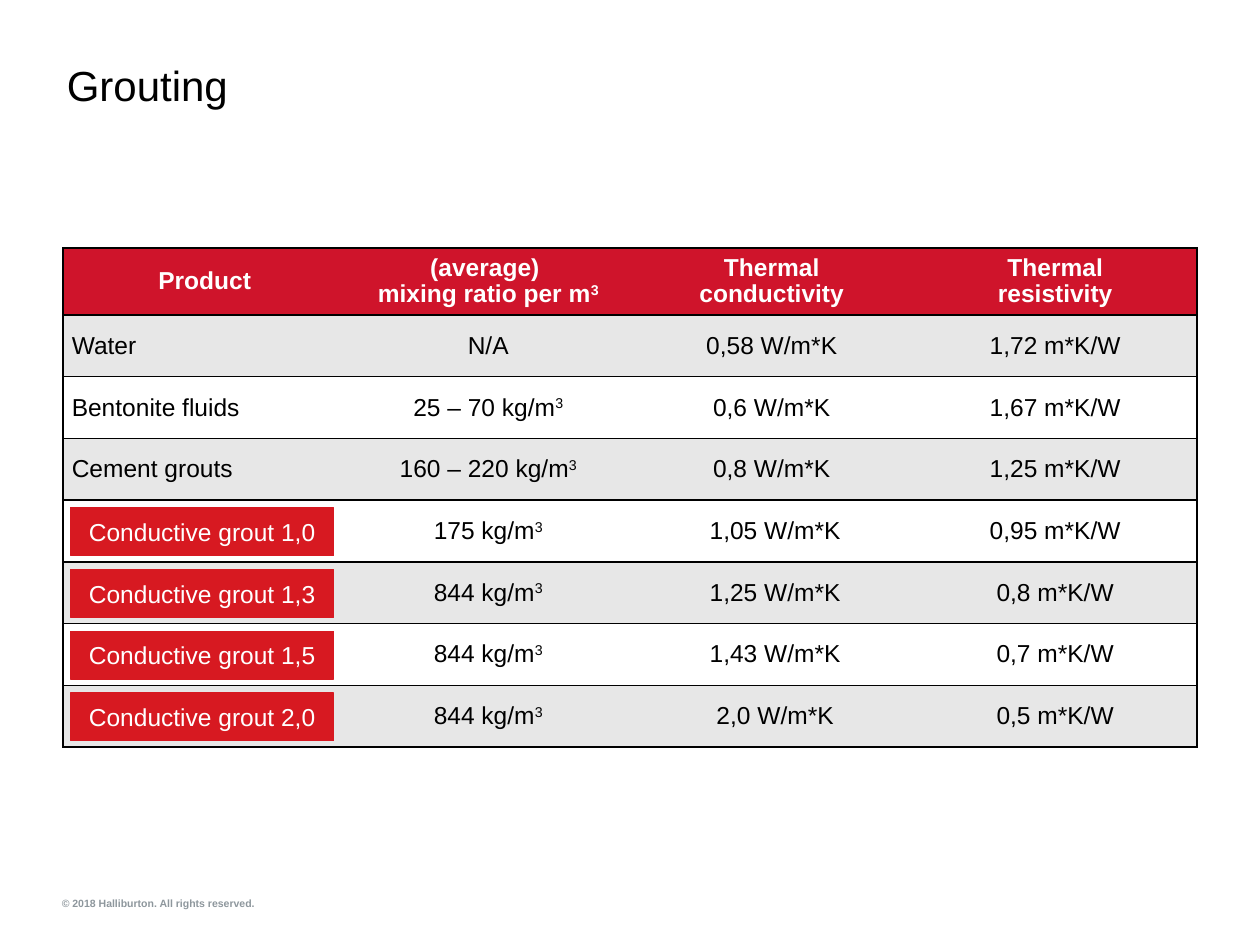
from lxml import etree
from pptx import Presentation
from pptx.dml.color import RGBColor
from pptx.enum.shapes import MSO_SHAPE
from pptx.enum.text import MSO_ANCHOR as ANCHOR, PP_ALIGN as ALIGN
from pptx.oxml.ns import qn
from pptx.util import Inches, Pt


def color(hex_text):
    return RGBColor.from_string(hex_text)


def add_run(p, text, size, hex_text, bold=False):
    r = p.add_run()
    r.text = text
    r.font.name = "Arial"
    r.font.size = Pt(size)
    r.font.bold = bold
    r.font.color.rgb = color(hex_text)
    return r


prs = Presentation()
prs.slide_width, prs.slide_height = Inches(10), Inches(7.5)
s = prs.slides.add_slide(prs.slide_layouts[5])

title = s.shapes.title
title.left, title.top = Inches(0.43), Inches(0.43)
title.width, title.height = Inches(9.15), Inches(0.93)
tf = title.text_frame
tf.margin_left = tf.margin_right = Inches(0.1)
tf.margin_top = tf.margin_bottom = Inches(0.04)
tf.vertical_anchor = ANCHOR.TOP
tf.paragraphs[0].alignment = ALIGN.LEFT
add_run(tf.paragraphs[0], "Grouting", 24, "000000")

footer = s.shapes.add_textbox(Inches(0.49), Inches(7.12), Inches(1.55), Inches(0.1))
tf = footer.text_frame
tf.margin_left = tf.margin_right = tf.margin_top = tf.margin_bottom = 0
tf.word_wrap = False
tf.paragraphs[0].alignment = ALIGN.LEFT
add_run(tf.paragraphs[0], "© 2018 Halliburton. All rights reserved.", 6, "8E979D", True)

rows = [
    ["Product", "(average) \nmixing ratio per m³", "Thermal\nconductivity", "Thermal\nresistivity"],
    ["Water", "N/A", "0,58 W/m*K", "1,72 m*K/W"],
    ["Bentonite fluids", "25 – 70 kg/m³", "0,6 W/m*K", "1,67 m*K/W"],
    ["Cement grouts", "160 – 220 kg/m³", "0,8 W/m*K", "1,25 m*K/W"],
    ["", "175 kg/m³", " 1,05 W/m*K", "0,95 m*K/W"],
    ["", "844 kg/m³", " 1,25 W/m*K", "0,8 m*K/W"],
    ["", "844 kg/m³", " 1,43 W/m*K", "0,7 m*K/W"],
    ["", "844 kg/m³", " 2,0 W/m*K", "0,5 m*K/W"],
]
table = s.shapes.add_table(8, 4, Inches(0.5), Inches(1.97), Inches(9), Inches(3.96)).table
for col in table.columns:
    col.width = Inches(2.25)

for i, row in enumerate(rows):
    header = i == 0
    table.rows[i].height = Inches(0.53 if header else 0.49)
    fill = "CF142B" if header else "E7E7E7" if i % 2 else "FFFFFF"
    for j, text in enumerate(row):
        cell = table.cell(i, j)
        cell.fill.solid()
        cell.fill.fore_color.rgb = color(fill)
        cell.vertical_anchor = ANCHOR.MIDDLE
        cell.margin_left = cell.margin_right = Inches(0.07)
        cell.margin_top = cell.margin_bottom = Inches(0.04)

        tcPr = cell._tc.get_or_add_tcPr()
        sides = [("L", j == 0), ("R", j == 3), ("T", True), ("B", True)]
        for k, (side, visible) in enumerate(sides):
            ln = etree.Element(qn("a:ln" + side), w=str(Pt(1)))
            if visible:
                line_fill = etree.SubElement(ln, qn("a:solidFill"))
                etree.SubElement(line_fill, qn("a:srgbClr"), val="000000")
            else:
                etree.SubElement(ln, qn("a:noFill"))
            tcPr.insert(k, ln)

        if not text:
            continue
        tf = cell.text_frame
        for k, line in enumerate(text.split("\n")):
            p = tf.add_paragraph() if k else tf.paragraphs[0]
            p.alignment = ALIGN.CENTER if header or j else ALIGN.LEFT
            if header:
                p.line_spacing = 0.95
            ink = "FFFFFF" if header else "000000"
            add_run(p, line.removesuffix("³"), 14, ink, header)
            if line.endswith("³"):
                r = add_run(p, "3", 14, ink, header)
                r._r.get_or_add_rPr().set("baseline", "30000")

for i, grade in enumerate(["1,0", "1,3", "1,5", "2,0"]):
    sp = s.shapes.add_shape(MSO_SHAPE.RECTANGLE, Inches(0.56), Inches(4.03 + 0.49 * i),
                            Inches(2.09), Inches(0.38))
    sp.shadow.inherit = False
    sp.fill.solid()
    sp.fill.fore_color.rgb = color("D71921")
    sp.line.color.rgb = color("D71921")
    sp.line.width = Pt(0.75)
    tf = sp.text_frame
    tf.margin_left = tf.margin_right = tf.margin_top = tf.margin_bottom = Inches(0.1)
    tf.vertical_anchor = ANCHOR.MIDDLE
    tf.word_wrap = True
    tf.paragraphs[0].alignment = ALIGN.CENTER
    add_run(tf.paragraphs[0], f"Conductive grout {grade}", 14, "FFFFFF")

prs.save("out.pptx")
